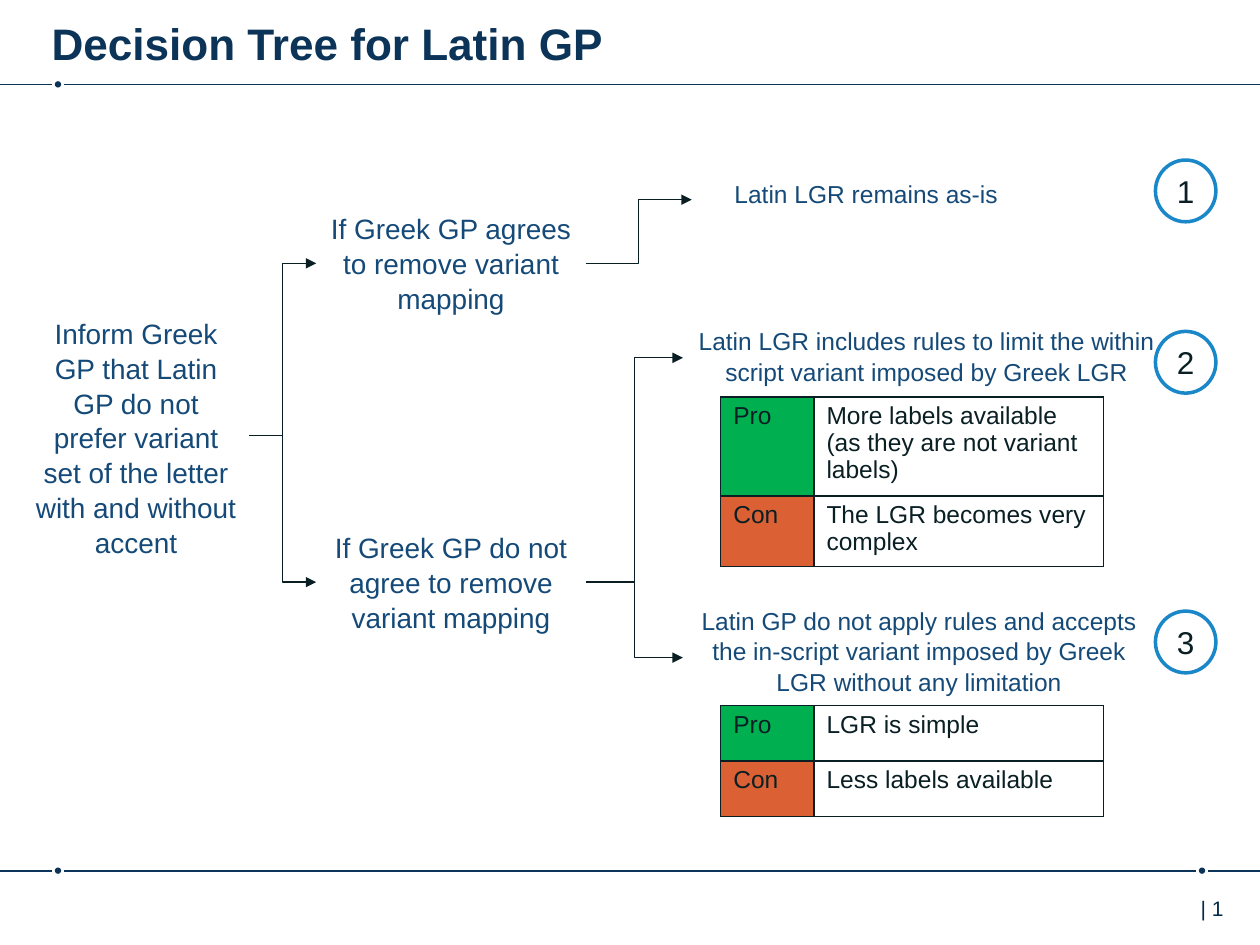
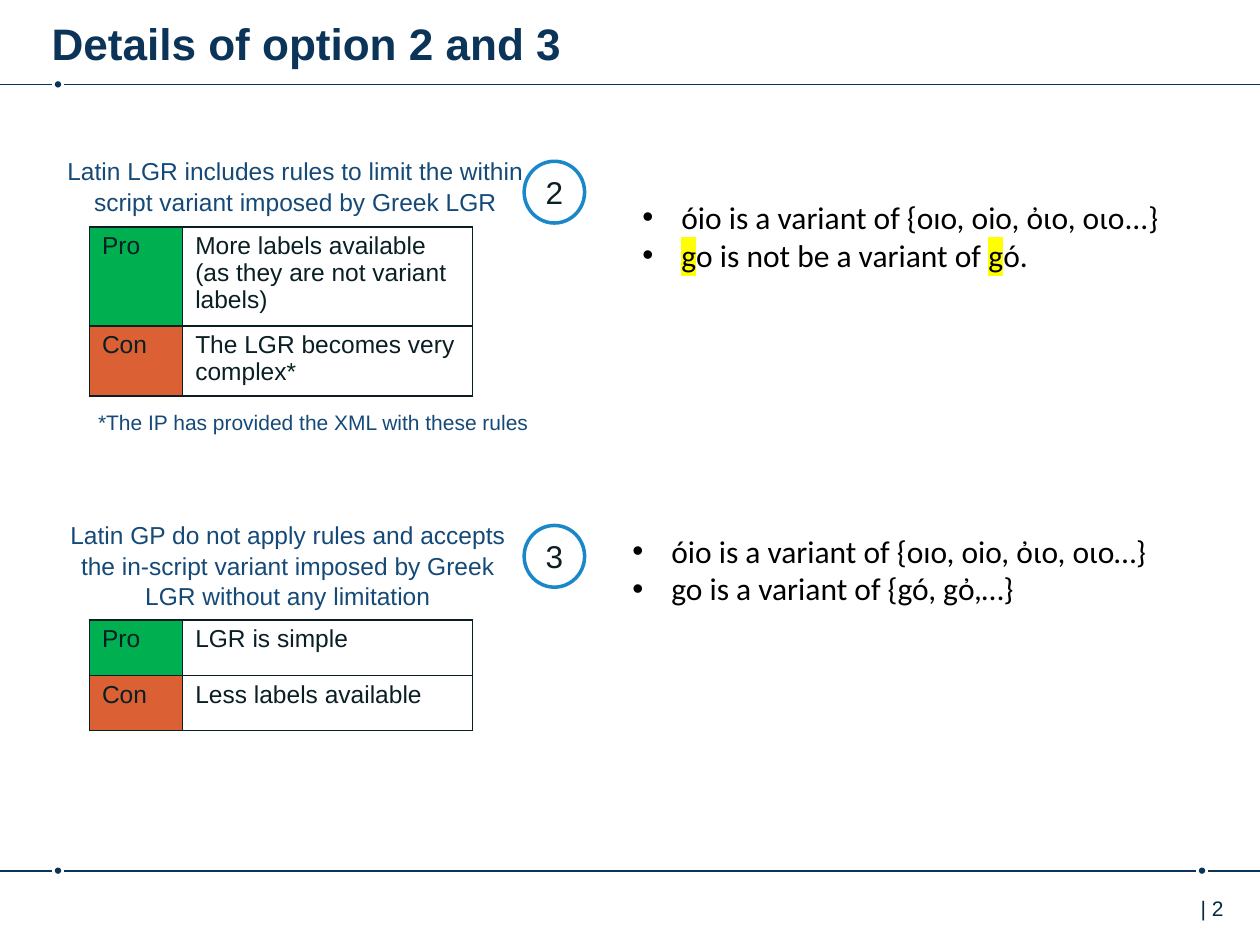
from lxml.etree import SubElement
from pptx import Presentation
from pptx.dml.color import RGBColor
from pptx.enum.shapes import MSO_CONNECTOR, MSO_SHAPE
from pptx.enum.text import MSO_ANCHOR, PP_ALIGN
from pptx.oxml import parse_xml
from pptx.oxml.ns import nsdecls, qn
from pptx.util import Emu, Inches, Pt

COLORS = {
    "navy": "0C3458", "text": "154A78", "ink": "0A1F24", "page": "002B49",
    "ring": "1A87C9", "pro": "00B050", "con": "DB6033", "white": "FFFFFF",
    "black": "000000", "mark": "FFFF00",
}
WIDTH, HEIGHT = 10, 7.5
HEADER_Y, FOOTER_Y = 0.67, 6.91
LEFT_DOT, RIGHT_DOT = 0.46, 9.54
DOT, DOT_GAP = 0.05, 0.05
COLUMNS = (0.74, 2.3)
CIRCLE_SHIFT = (3.75, 0.1)
TABLE_INDENT = 0.3

TITLES = ("Decision Tree for Latin GP", "Details of option 2 and 3")

# name: (left, top, width, height), text
STEPS = {
    "inform": ((0.18, 2.45, 1.8, 2.01),
               "Inform Greek GP that Latin GP do not prefer variant set of "
               "the letter with and without accent"),
    "agrees": ((2.51, 1.62, 2.14, 0.94),
               "If Greek GP agrees to remove variant mapping"),
    "refuses": ((2.51, 4.15, 2.14, 0.94),
                "If Greek GP do not agree to remove variant mapping"),
}
AS_IS = ((5.49, 1.36, 2.77, 0.45), "Latin LGR remains as-is")
BRANCHES = (("inform", "agrees"), ("inform", "refuses"), ("agrees", 1),
            ("refuses", 2), ("refuses", 3))

OPTIONS = {
    2: {"text": "Latin LGR includes rules to limit the within script variant "
                "imposed by Greek LGR",
        "size": (3.87, 0.62), "table_drop": 0.62, "rows": (0.75, 0.54),
        "pro": ("More labels available", "(as they are not variant labels)"),
        "con": ("The LGR becomes very complex",)},
    3: {"text": "Latin GP do not apply rules and accepts the in-script variant "
                "imposed by Greek LGR without any limitation",
        "size": (3.75, 0.94), "table_drop": 0.85, "rows": (0.44, 0.44),
        "pro": ("LGR is simple",), "con": ("Less labels available",)},
}
TREE_PLACES = {2: (5.42, 2.53), 3: (5.42, 4.75)}
DETAIL_PLACES = {2: (0.41, 1.18), 3: (0.41, 4.07)}

FOOTNOTE = "*The IP has provided the XML with these rules"
# (left, top), bullets; each bullet is a list of (text, highlighted)
EXAMPLES = (
    ((5, 1.52), (
        [("óio is a variant of {oıo, oio, ὀιο, οιο...}", False)],
        [("g", True), ("o is not be a variant of ", False),
         ("g", True), ("ó.", False)])),
    ((4.92, 4.17), (
        [("óio is a variant of {oıo, oio, ὀιο, οιο…}", False)],
        [("go is a variant of {gó, gὀ,…}", False)])),
)


def rgb(name):
    return RGBColor.from_string(COLORS[name])


def add_run(p, text, size, color, font="Arial", bold=False):
    r = p.add_run()
    r.text = text
    r.font.size, r.font.name, r.font.bold = Pt(size), font, bold
    r.font.color.rgb = rgb(color)
    return r


def add_box(s, box):
    sp = s.shapes.add_textbox(*map(Inches, box))
    sp.text_frame.word_wrap = True
    return sp


def add_text(s, box, text, size, color="text", align=PP_ALIGN.CENTER):
    sp = add_box(s, box)
    p = sp.text_frame.paragraphs[0]
    p.alignment, p.line_spacing = align, 1.04
    add_run(p, text, size, color)
    return sp


def add_circle(s, box, fill):
    sp = s.shapes.add_shape(MSO_SHAPE.OVAL, *map(Inches, box))
    sp.shadow.inherit = False
    sp.fill.solid()
    sp.fill.fore_color.rgb = rgb(fill)
    return sp


def add_line(s, kind, start, end, color, weight):
    line = s.shapes.add_connector(kind, *map(Inches, (*start, *end)))
    line.line.color.rgb = rgb(color)
    line.line.width = Pt(weight)
    SubElement(line._element.spPr, qn("a:effectLst"))
    return line


def add_rule(s, y, dots):
    """Full-width line that is interrupted by a dot at each given x."""
    left = 0
    for x in dots:
        dot = add_circle(s, (x - DOT / 2, y - DOT / 2, DOT, DOT), "navy")
        dot.line.fill.background()
        add_line(s, MSO_CONNECTOR.STRAIGHT, (left, y), (x - DOT_GAP, y), "navy", 1)
        left = x + DOT_GAP
    add_line(s, MSO_CONNECTOR.STRAIGHT, (left, y), (WIDTH, y), "navy", 1)


def add_frame(prs, title):
    """New slide with title, rules and page number."""
    s = prs.slides.add_slide(prs.slide_layouts[6])
    add_rule(s, HEADER_Y, (LEFT_DOT,))
    add_rule(s, FOOTER_Y, (LEFT_DOT, RIGHT_DOT))
    add_text(s, (9.43, 7.05, 0.55, 0.4), f"| {len(prs.slides)}", 12, "page",
             PP_ALIGN.LEFT)
    tf = add_box(s, (0.41, 0.05, 8.76, 0.49)).text_frame
    tf.margin_left = tf.margin_right = 0
    tf.margin_top = Inches(0.08)
    add_run(tf.paragraphs[0], title, 25.2, "navy", bold=True)
    return s


def add_number(s, number, left, top):
    sp = add_circle(s, (left, top, 0.48, 0.49), "white")
    sp.line.color.rgb = rgb("ring")
    sp.line.width = Pt(2)
    tf = sp.text_frame
    tf.vertical_anchor = MSO_ANCHOR.MIDDLE
    p = tf.paragraphs[0]
    p.alignment = PP_ALIGN.CENTER
    add_run(p, str(number), 18, "ink")


def set_borders(cell):
    tcPr = cell._tc.get_or_add_tcPr()
    for side in ("lnL", "lnR", "lnT", "lnB"):
        tcPr.append(parse_xml(
            f'<a:{side} {nsdecls("a")} w="{Pt(1)}"><a:solidFill>'
            f'<a:srgbClr val="{COLORS["ink"]}"/></a:solidFill></a:{side}>'))


def fill_cell(cell, lines, fill=None):
    set_borders(cell)
    if fill:
        cell.fill.solid()
        cell.fill.fore_color.rgb = rgb(fill)
    else:
        cell.fill.background()
    p = cell.text_frame.paragraphs[0]
    p.line_spacing = 0.98
    for i, line in enumerate(lines):
        if i:
            p.add_line_break()
        add_run(p, line, 14, "ink")


def add_pro_con(s, left, top, option, con_mark):
    heights = option["rows"]
    table = s.shapes.add_table(2, 2, *map(Inches, (
        left, top, sum(COLUMNS), sum(heights)))).table
    table.first_row = table.horz_banding = False
    for column, width in zip(table.columns, COLUMNS):
        column.width = Inches(width)
    for i, (side, mark) in enumerate((("pro", ""), ("con", con_mark))):
        table.rows[i].height = Inches(heights[i])
        *first, last = option[side]
        fill_cell(table.cell(i, 0), (side.capitalize(),), side)
        fill_cell(table.cell(i, 1), (*first, last + mark))


def add_option(s, number, left, top, con_mark=""):
    """Option text with its number and pro/con table; returns the text box."""
    option = OPTIONS[number]
    sp = add_text(s, (left, top, *option["size"]), option["text"], 14)
    add_pro_con(s, left + TABLE_INDENT, top + option["table_drop"], option, con_mark)
    add_number(s, number, left + CIRCLE_SHIFT[0], top + CIRCLE_SHIFT[1])
    return sp


def add_branch(s, parent, child):
    line = add_line(s, MSO_CONNECTOR.ELBOW, (0, 0), (1, 1), "ink", 0.75)
    line.begin_connect(parent, 3)
    line.end_connect(child, 1)
    SubElement(line.line._get_or_add_ln(), qn("a:tailEnd"), type="triangle")


def add_bullets(s, place, bullets):
    tf = add_box(s, (*place, 4.37, 0.71)).text_frame
    for i, runs in enumerate(bullets):
        p = tf.add_paragraph() if i else tf.paragraphs[0]
        pPr = p._p.get_or_add_pPr()
        pPr.set("marL", str(Inches(0.31)))
        pPr.set("indent", str(Emu(-Inches(0.31))))
        SubElement(pPr, qn("a:buFont"), typeface="Arial")
        SubElement(pPr, qn("a:buChar"), char="•")
        for text, marked in runs:
            r = add_run(p, text, 18, "black", "Calibri")
            if marked:
                r._r.rPr.find(qn("a:solidFill")).addnext(parse_xml(
                    f'<a:highlight {nsdecls("a")}>'
                    f'<a:srgbClr val="{COLORS["mark"]}"/></a:highlight>'))


def build_tree(prs):
    s = add_frame(prs, TITLES[0])
    nodes = {name: add_text(s, box, text, 16)
             for name, (box, text) in STEPS.items()}
    nodes[1] = add_text(s, *AS_IS, 14)
    add_number(s, 1, TREE_PLACES[2][0] + CIRCLE_SHIFT[0], 1.27)
    for number, place in TREE_PLACES.items():
        nodes[number] = add_option(s, number, *place)
    for parent, child in BRANCHES:
        add_branch(s, nodes[parent], nodes[child])


def build_details(prs):
    s = add_frame(prs, TITLES[1])
    for number, place in DETAIL_PLACES.items():
        add_option(s, number, *place, con_mark="*" if number == 2 else "")
    for place, bullets in EXAMPLES:
        add_bullets(s, place, bullets)
    add_text(s, (0.68, 3.19, 4.13, 0.27), FOOTNOTE, 12, align=PP_ALIGN.LEFT)


def main():
    prs = Presentation()
    prs.slide_width, prs.slide_height = Inches(WIDTH), Inches(HEIGHT)
    build_tree(prs)
    build_details(prs)
    prs.save("out.pptx")


if __name__ == "__main__":
    main()
